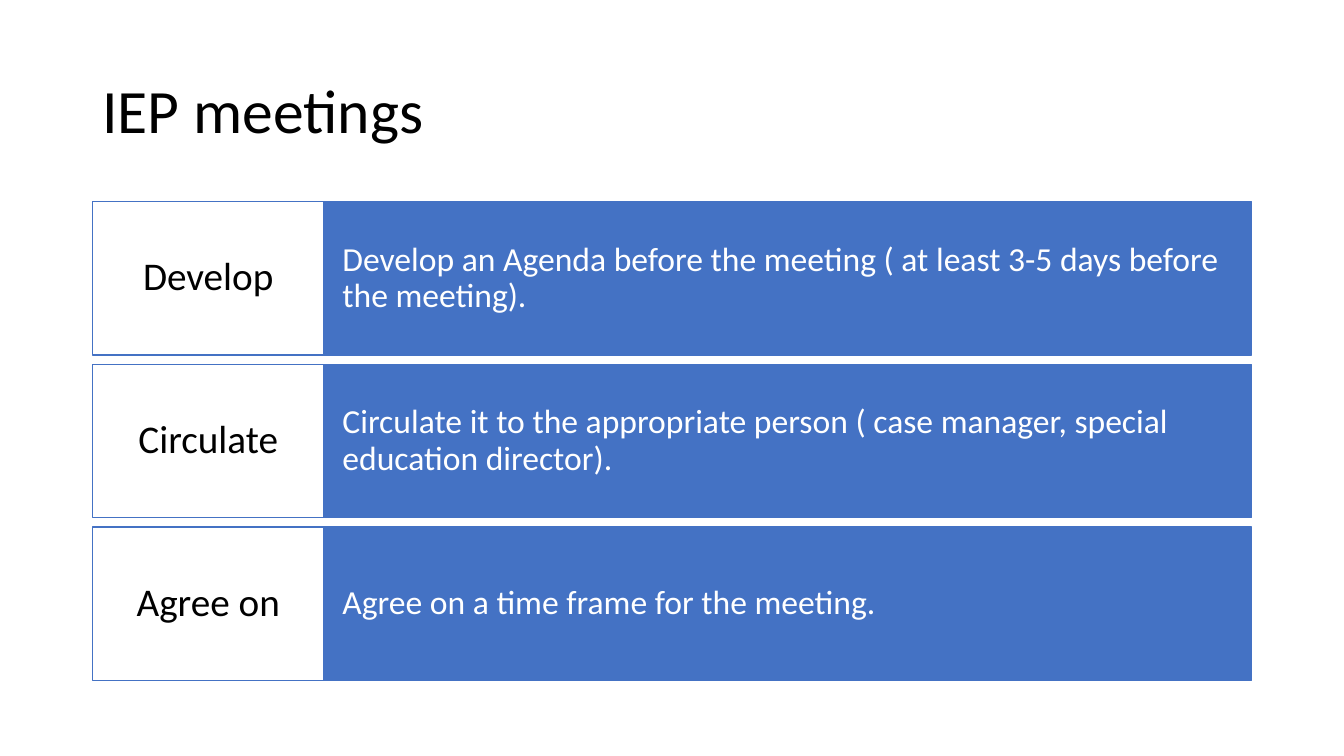
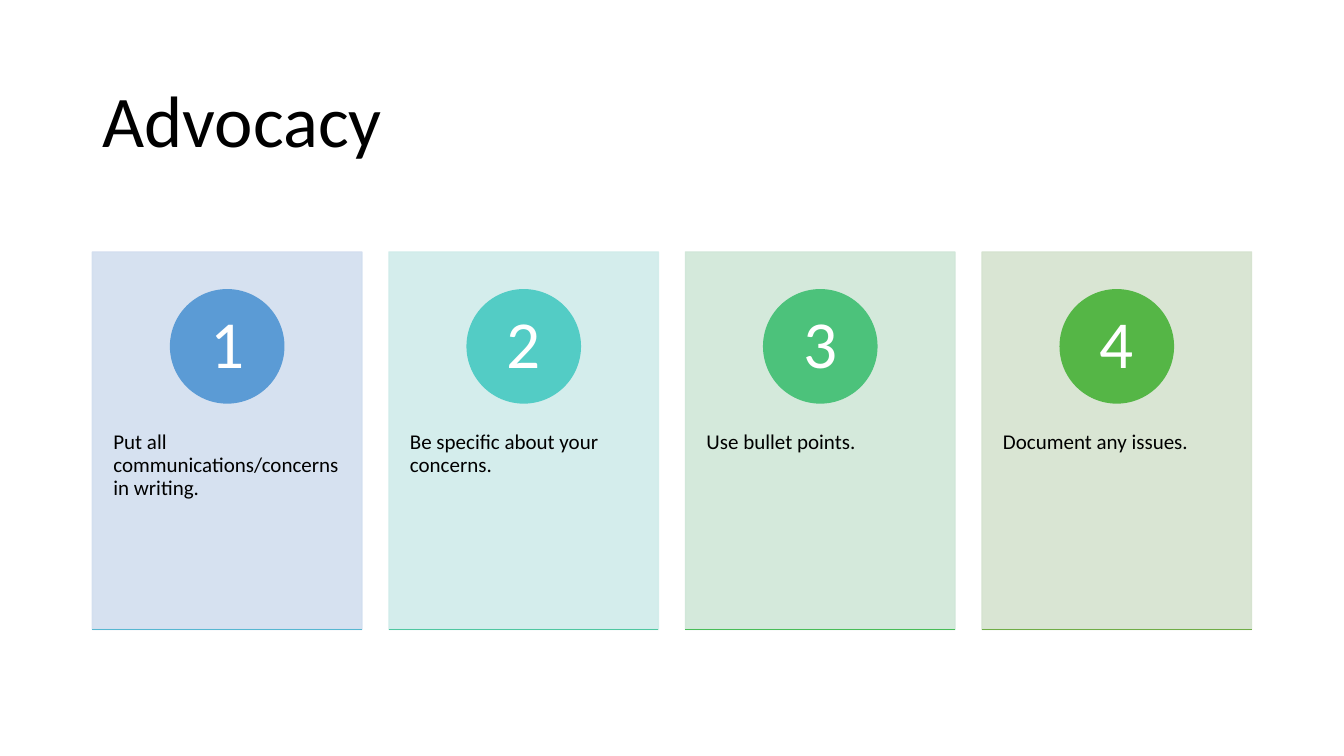
import pptx
import pptx.util
import pptx.dml.color
import pptx.enum.shapes
import pptx.enum.text
import pptx.oxml
import pptx.oxml.ns
from lxml import etree

Pt = pptx.util.Pt
MSO_SHAPE = pptx.enum.shapes.MSO_SHAPE
ALIGN = pptx.enum.text.PP_ALIGN
ANCHOR = pptx.enum.text.MSO_ANCHOR
qn = pptx.oxml.ns.qn

FONT = "Calibri"
BLACK, WHITE, BLUE = "000000", "FFFFFF", "4472C4"
LEFT, WIDTH = 66, 828

ROWS = [
    ("Develop", "Develop an Agenda before the meeting ( at least 3-5 days before the meeting)."),
    ("Circulate", "Circulate it to the appropriate person ( case manager, special education director)."),
    ("Agree on", "Agree on a time frame for the meeting."),
]
# text, card colour, circle colour, base line colour
CARDS = [
    ("Put all communications/concerns in writing.", "D2DEEF", "5B9BD5", "57B7D1"),
    ("Be specific about your concerns.", "D0ECEA", "53CCC5", "4FC7A0"),
    ("Use bullet points.", "D0E7D8", "4CC27B", "48BD58"),
    ("Document any issues.", "D5E3CF", "55B646", "70AD47"),
]


def rgb(color):
    return pptx.dml.color.RGBColor.from_string(color)


def write(sp, text, size, color, align=ALIGN.LEFT, anchor=ANCHOR.MIDDLE, insets=(7.2, 3.6, 7.2, 3.6)):
    """Fill a shape with one paragraph; insets are left, top, right, bottom."""
    tf = sp.text_frame
    tf.word_wrap = True
    tf.vertical_anchor = anchor
    tf.margin_left, tf.margin_top, tf.margin_right, tf.margin_bottom = map(Pt, insets)
    p = tf.paragraphs[0]
    p.text = text
    p.alignment = align
    p.line_spacing = 0.9
    font = p.runs[0].font
    font.name, font.size = FONT, Pt(size)
    font.color.rgb = rgb(color)


def add_box(s, kind, x, y, w, h, fill, line):
    sp = s.shapes.add_shape(kind, Pt(x), Pt(y), Pt(w), Pt(h))
    sp.shadow.inherit = False
    sp.fill.solid()
    sp.fill.fore_color.rgb = rgb(fill)
    sp.line.color.rgb = rgb(line)
    sp.line.width = Pt(1)
    return sp


def set_opacity(sp, percent):
    for color in sp._element.spPr.iter(qn("a:srgbClr")):
        etree.SubElement(color, qn("a:alpha"), val=str(percent * 1000))


def add_rule(s, x, y, w, color):
    line = s.shapes.add_connector(pptx.enum.shapes.MSO_CONNECTOR.STRAIGHT, Pt(x), Pt(y), Pt(x + w), Pt(y))
    line.line.color.rgb = rgb(color)
    line.line.width = Pt(1)
    etree.SubElement(line._element.spPr, qn("a:effectLst"))


def add_title(s, text, y, h, size):
    sp = s.shapes.add_textbox(Pt(LEFT), Pt(y), Pt(WIDTH), Pt(h))
    write(sp, text, size, BLACK)


def add_row(s, x, y, w, h, label, text):
    label_w = 0.2 * w
    body = add_box(s, MSO_SHAPE.RECTANGLE, x + label_w, y, w - label_w, h, BLUE, BLUE)
    write(body, text, 24, WHITE, insets=(13, 28, 13, 28))
    head = add_box(s, MSO_SHAPE.RECTANGLE, x, y, label_w, h, WHITE, BLUE)
    write(head, label, 28, BLACK, ALIGN.CENTER, insets=(9, 11, 9, 11))


def add_card(s, x, y, w, h, number, text, tint, accent, base):
    card = add_box(s, MSO_SHAPE.RECTANGLE, x, y, w, h, tint, tint)
    set_opacity(card, 90)
    write(card, text, 15, BLACK, anchor=ANCHOR.TOP, insets=(15, 0.38 * h + 26, 15, 26))
    d = 0.3 * h
    circle = add_box(s, MSO_SHAPE.OVAL, x + (w - d) / 2, y + 0.1 * h, d, d, accent, accent)
    write(circle, str(number), 48, WHITE, ALIGN.CENTER, insets=(6, 1, 6, 1))
    add_rule(s, x, y + h, w, base)


def add_meetings_slide(s):
    add_title(s, "IEP meetings", 29, 104, 44)
    top, height, gap = 144, 342, 6.75
    row_h = (height + gap) / len(ROWS) - gap
    for i, (label, text) in enumerate(ROWS):
        add_row(s, LEFT, top + i * (row_h + gap), WIDTH, row_h, label, text)


def add_advocacy_slide(s):
    add_title(s, "Advocacy", 44, 89, 52)
    n = len(CARDS)
    card_w = WIDTH / (n + 0.1 * (n - 1))
    for i, card in enumerate(CARDS):
        add_card(s, LEFT + i * 1.1 * card_w, 180, card_w, 1.4 * card_w, i + 1, *card)


def main():
    prs = pptx.Presentation()
    prs.slide_width, prs.slide_height = Pt(960), Pt(540)
    for build in (add_meetings_slide, add_advocacy_slide):
        build(prs.slides.add_slide(prs.slide_layouts[6]))
    prs.save("out.pptx")


if __name__ == "__main__":
    main()
